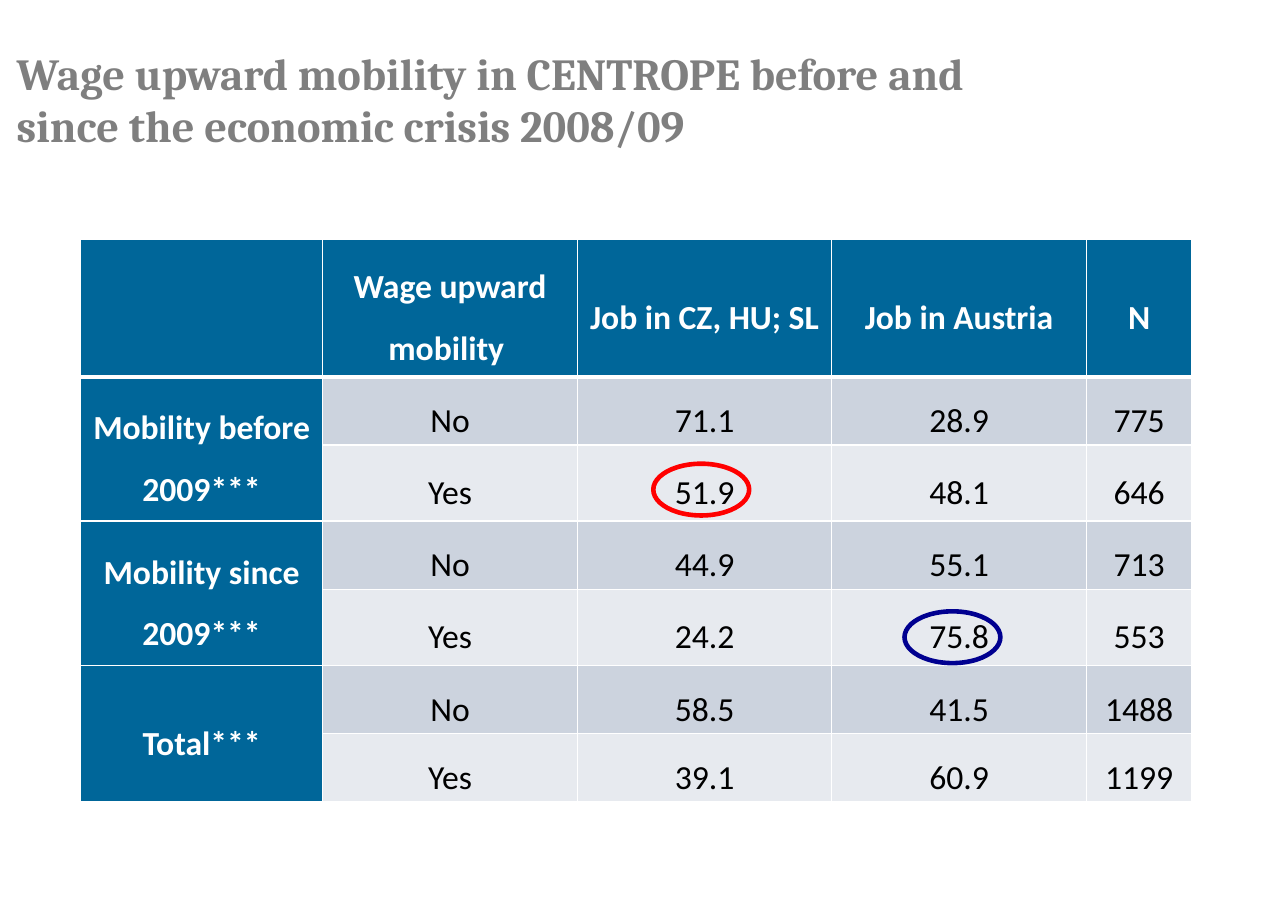
import dataclasses

import pptx
import pptx.dml.color
import pptx.enum.shapes
import pptx.enum.text
import pptx.oxml
import pptx.oxml.ns
import pptx.util

Inches = pptx.util.Inches
Pt = pptx.util.Pt


@dataclasses.dataclass(frozen=True)
class Theme:
    title_font: str = "Cambria"
    table_font: str = "Calibri"
    title_size: int = 29
    title_spacing: int = 34
    table_size: int = 22
    title_color: str = "7F7F7F"
    header_fill: str = "006699"
    header_text: str = "FFFFFF"
    body_text: str = "000000"
    no_fill: str = "CCD3DE"
    yes_fill: str = "E7EAEF"
    border: str = "FFFFFF"
    local_mark: str = "FF0000"
    austria_mark: str = "000090"


def rgb(color):
    return pptx.dml.color.RGBColor.from_string(color)


class SlideBuilder:
    def __init__(self, slide, theme):
        self.slide = slide
        self.theme = theme

    def styled_run(self, paragraph, text, font_name, size, color, bold):
        run = paragraph.add_run()
        run.text = text
        run.font.name = font_name
        run.font.size = Pt(size)
        run.font.color.rgb = rgb(color)
        run.font.bold = bold

    def title(self, text, left, top, width, height):
        box = self.slide.shapes.add_textbox(
            Inches(left), Inches(top), Inches(width), Inches(height))
        frame = box.text_frame
        frame.word_wrap = True
        frame.vertical_anchor = pptx.enum.text.MSO_ANCHOR.MIDDLE
        frame.margin_left = frame.margin_right = Inches(0.11)
        paragraph = frame.paragraphs[0]
        paragraph.line_spacing = Pt(self.theme.title_spacing)
        self.styled_run(paragraph, text, self.theme.title_font,
                        self.theme.title_size, self.theme.title_color, True)

    def borders(self, cell, widths):
        """Draw the sides of a cell; widths maps L, R, T, B, in that order, to points."""
        properties = cell._tc.get_or_add_tcPr()
        for side, width in widths.items():
            properties.append(pptx.oxml.parse_xml(
                f'<a:ln{side} {pptx.oxml.ns.nsdecls("a")} w="{Pt(width)}">'
                f'<a:solidFill><a:srgbClr val="{self.theme.border}"/></a:solidFill>'
                f'</a:ln{side}>'))

    def cell(self, cell, text, fill, color, bold):
        cell.fill.solid()
        cell.fill.fore_color.rgb = rgb(fill)
        cell.vertical_anchor = pptx.enum.text.MSO_ANCHOR.MIDDLE
        cell.margin_left = cell.margin_right = Inches(0.07)
        cell.margin_top = cell.margin_bottom = 0
        if text:
            paragraph = cell.text_frame.paragraphs[0]
            paragraph.alignment = pptx.enum.text.PP_ALIGN.CENTER
            paragraph.line_spacing = 1.5
            self.styled_run(paragraph, text, self.theme.table_font,
                            self.theme.table_size, color, bold)

    def table(self, rows, left, top, widths, heights):
        """Place a table whose first column merges each pair of No and Yes rows."""
        theme = self.theme
        table = self.slide.shapes.add_table(
            len(rows), len(widths), Inches(left), Inches(top),
            Inches(sum(widths)), Inches(sum(heights))).table
        for column, width in zip(table.columns, widths):
            column.width = Inches(width)
        for row, height in zip(table.rows, heights):
            row.height = Inches(height)
        for r, texts in enumerate(rows):
            for c, text in enumerate(texts):
                cell = table.cell(r, c)
                self.borders(cell, {"L": 1, "R": 1, "T": 3 if r == 1 else 1,
                                    "B": 3 if r == 0 else 1})
                if r == 0 or c == 0:
                    self.cell(cell, text, theme.header_fill, theme.header_text, True)
                else:
                    band = theme.no_fill if r % 2 else theme.yes_fill
                    self.cell(cell, text, band, theme.body_text, False)
        for r in range(1, len(rows), 2):
            table.cell(r, 0).merge(table.cell(r + 1, 0))

    def ring(self, left, top, color):
        ring = self.slide.shapes.add_shape(
            pptx.enum.shapes.MSO_SHAPE.OVAL,
            Inches(left), Inches(top), Inches(0.87), Inches(0.47))
        ring.shadow.inherit = False
        ring.fill.background()
        ring.line.color.rgb = rgb(color)
        ring.line.width = Pt(3)


MOBILITY = [
    ["", "Wage upward mobility ", "Job in CZ, HU; SL", "Job in Austria", "N"],
    ["Mobility before 2009***", "No", "71.1", "28.9", "775"],
    ["", "Yes", "51.9", "48.1", "646"],
    ["Mobility since 2009***", "No", "44.9", "55.1", "713"],
    ["", "Yes", "24.2", "75.8", "553"],
    ["Total***", "No", "58.5", "41.5", "1488"],
    ["", "Yes", "39.1", "60.9", "1199"],
]


def main():
    presentation = pptx.Presentation()
    presentation.slide_width = Inches(11.69)
    presentation.slide_height = Inches(8.27)
    theme = Theme()
    builder = SlideBuilder(
        presentation.slides.add_slide(presentation.slide_layouts[6]), theme)
    builder.title("Wage upward mobility in CENTROPE before and since "
                  "the economic crisis 2008/09", 0.04, 0.35, 9.29, 1.1)
    builder.table(MOBILITY, 0.73, 2.17, [2.2, 2.31, 2.31, 2.31, 0.96],
                  [1.25, 0.62, 0.69, 0.62, 0.69, 0.62, 0.62])
    builder.ring(8.21, 5.55, theme.austria_mark)
    builder.ring(5.93, 4.21, theme.local_mark)
    presentation.save("out.pptx")


if __name__ == "__main__":
    main()
